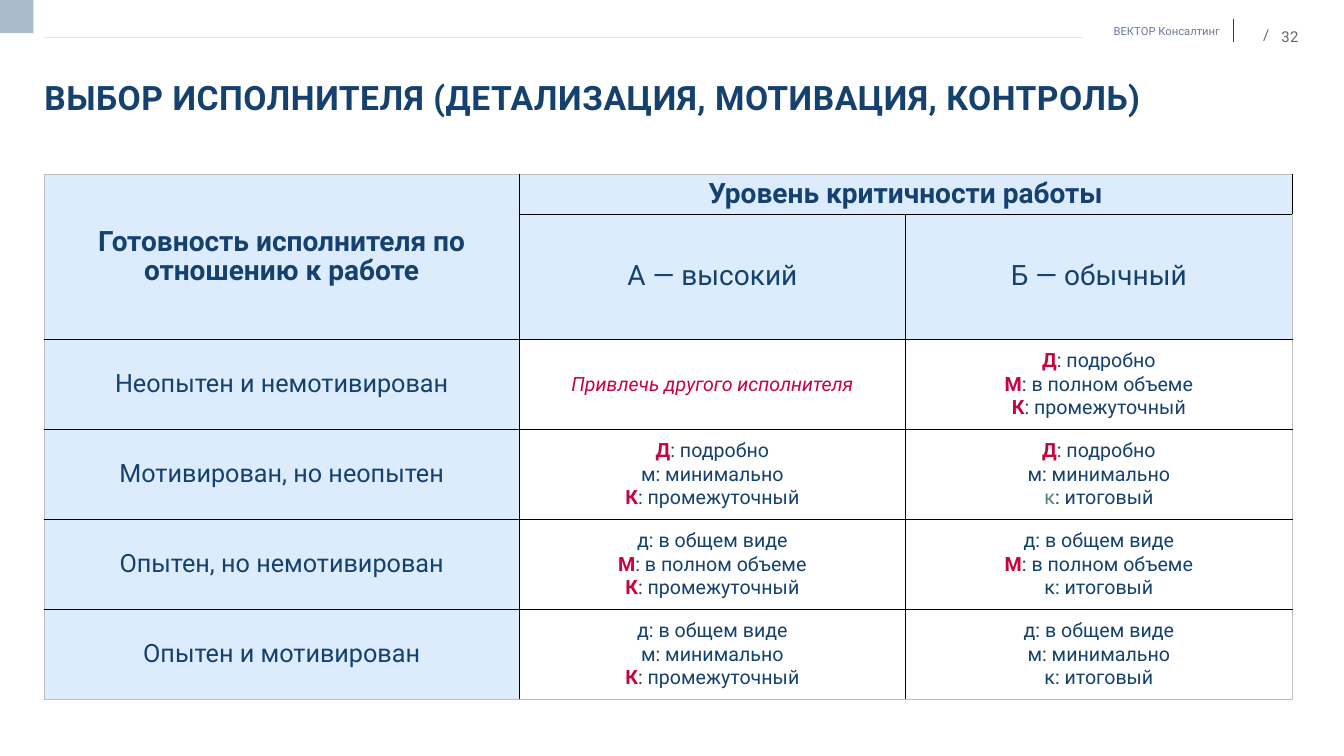
"""Slide with a table for choosing who performs a task."""
from dataclasses import dataclass, field

from lxml.etree import SubElement
from pptx import Presentation
from pptx.dml.color import RGBColor
from pptx.enum.shapes import MSO_CONNECTOR as Connector, MSO_SHAPE as Preset
from pptx.enum.text import MSO_ANCHOR as Anchor, MSO_AUTO_SIZE as AutoSize, PP_ALIGN as Align
from pptx.oxml.ns import qn
from pptx.util import Emu, Inches, Pt

WIDTH, HEIGHT = Inches(13.33), Inches(7.5)
NAVY, RED, GREEN, PALE = "15416F", "C60440", "56836F", "DCECFC"
BLACK, SILVER, GREY = "000000", "BFBFBF", "666666"
COLUMN_SHARES = (35.33, 28.76, 28.76)
ROW_SHARES = (5.3, 16.53) + (11.91,) * 4
MEANINGS = {
    "Д": "подробно", "д": "в общем виде",
    "М": "в полном объеме", "м": "минимально",
    "К": "промежуточный", "к": "итоговый",
}


@dataclass(frozen=True)
class Box:
    """Left, top, width and height as percentages of the slide."""
    left: float
    top: float
    width: float
    height: float

    def lengths(self) -> tuple[Emu, ...]:
        """Return the four lengths in slide units."""
        return across(self.left), down(self.top), across(self.width), down(self.height)


@dataclass(frozen=True)
class Span:
    """A piece of text in one format."""
    text: str
    size: float
    color: str = NAVY
    bold: bool = False
    italic: bool = False
    tracking: int = 0


@dataclass(frozen=True)
class Label:
    """A one-line text box."""
    box: Box
    span: Span
    align: Align = Align.RIGHT
    anchor: Anchor = Anchor.MIDDLE
    frame: dict = field(default_factory=lambda: dict.fromkeys(
        ("margin_left", "margin_top", "margin_right", "margin_bottom"), 0))


@dataclass(frozen=True)
class Rule:
    """A straight line between two points given as percentages."""
    start: tuple[float, float]
    end: tuple[float, float]
    color: str
    weight: float


@dataclass(frozen=True)
class Readiness:
    """A table row: performer state and the letter codes for levels A and B."""
    state: str
    high: str
    usual: str
    accent: str = ""


LABELS = (
    Label(Box(80.5, 3.2, 10.28, 1.73), Span("ВЕКТОР Консалтинг", 8, "697A98")),
    Label(Box(93.47, 4, 3.15, 1.73), Span("32", 10.7, GREY, tracking=40)),
    Label(Box(93.25, 2.67, 1.95, 3.73), Span("/", 10.7, GREY), Align.LEFT, Anchor.TOP, {}),
)
RULES = (
    Rule((91.75, 2.53), (91.75, 5.6), NAVY, 0.5),
    Rule((80.57, 4.93), (3.3, 4.93), "E7E6E6", 0.75),
)
ROWS = (
    Readiness("Неопытен и немотивирован", "", "ДМК"),
    Readiness("Мотивирован, но неопытен", "ДмК", "Дмк", accent="к"),
    Readiness("Опытен, но немотивирован", "дМК", "дМк"),
    Readiness("Опытен и мотивирован", "дмК", "дмк"),
)


def across(share: float) -> Emu:
    """Convert a percentage of the slide width."""
    return Emu(int(WIDTH * share / 100))


def down(share: float) -> Emu:
    """Convert a percentage of the slide height."""
    return Emu(int(HEIGHT * share / 100))


def paint(color: str) -> RGBColor:
    """Turn a hex string into a colour."""
    return RGBColor.from_string(color)


def apply(target, values: dict) -> None:
    """Set every attribute of the target from the values."""
    for name, value in values.items():
        setattr(target, name, value)


def write(para, spans: list[Span], align: Align, spacing: float = 1.0) -> None:
    """Fill a paragraph with formatted spans."""
    apply(para, {"alignment": align, "line_spacing": spacing})
    for span in spans:
        run = para.add_run()
        run.text = span.text
        apply(run.font, {"name": "Roboto", "size": Pt(span.size),
                         "bold": span.bold, "italic": span.italic})
        run.font.color.rgb = paint(span.color)
        if span.tracking:
            run.font._element.set("spc", str(span.tracking))


def add_label(page, label: Label) -> None:
    """Place a text box."""
    frame = page.shapes.add_textbox(*label.box.lengths()).text_frame
    apply(frame, {"word_wrap": True, "vertical_anchor": label.anchor, **label.frame})
    write(frame.paragraphs[0], [label.span], label.align)


def add_rule(page, rule: Rule) -> None:
    """Draw a line without a shadow."""
    (x1, y1), (x2, y2) = rule.start, rule.end
    line = page.shapes.add_connector(Connector.STRAIGHT, across(x1), down(y1), across(x2), down(y2))
    line.line.color.rgb = paint(rule.color)
    line.line.width = Pt(rule.weight)
    SubElement(line._element.spPr, qn("a:effectLst"))


def add_corner(page) -> None:
    """Draw the square in the top left corner."""
    corner = page.shapes.add_shape(Preset.RECTANGLE, *Box(0, 0, 2.48, 4.4).lengths())
    corner.shadow.inherit = False
    corner.fill.solid()
    corner.fill.fore_color.rgb = paint("AABACA")
    corner.line.fill.background()


def set_title(page, text: str) -> None:
    """Move and format the title placeholder."""
    title = page.shapes.title
    apply(title, dict(zip(("left", "top", "width", "height"), Box(3.3, 10.13, 87.55, 10.8).lengths())))
    apply(title.text_frame, {"margin_left": 0, "margin_top": 0, "margin_right": 0, "margin_bottom": 0,
                             "word_wrap": True, "auto_size": AutoSize.NONE, "vertical_anchor": Anchor.TOP})
    write(title.text_frame.paragraphs[0], [Span(text, 24, bold=True, tracking=40)], Align.LEFT)


def dress(cell, row: int, column: int) -> None:
    """Give a cell its borders, fill and margins."""
    properties = cell._tc.get_or_add_tcPr()
    outer = {"L": column == 0, "R": column == len(COLUMN_SHARES) - 1,
             "T": row == 0, "B": row == len(ROW_SHARES) - 1}
    for side, is_outer in outer.items():
        edge = SubElement(properties, qn(f"a:ln{side}"), w=str(Pt(0.75 if is_outer else 1)))
        fill = SubElement(edge, qn("a:solidFill"))
        SubElement(fill, qn("a:srgbClr"), val=SILVER if is_outer else BLACK)
    if row < 2 or column == 0:
        cell.fill.solid()
        cell.fill.fore_color.rgb = paint(PALE)
    else:
        cell.fill.background()
    apply(cell, {"vertical_anchor": Anchor.MIDDLE, "margin_left": Inches(0.1), "margin_right": Inches(0.1),
                 "margin_top": 0, "margin_bottom": 0})


def fill_cell(cell, lines: list[list[Span]], spacing: float = 1.0) -> None:
    """Write centred lines into a cell."""
    frame = cell.text_frame
    for index, spans in enumerate(lines):
        para = frame.add_paragraph() if index else frame.paragraphs[0]
        write(para, spans, Align.CENTER, spacing)


def advice(codes: str, accent: str = "") -> list[list[Span]]:
    """Spell out letter codes, with capitals bold and red."""
    if not codes:
        return [[Span("Привлечь другого исполнителя", 14, RED, italic=True)]]
    return [[Span(code, 14, RED if code.isupper() else GREEN if code == accent else NAVY, code.isupper()),
             Span(f": {MEANINGS[code]}", 14)] for code in codes]


def add_matrix(page) -> None:
    """Build the table of readiness against criticality."""
    box = Box(3.3, 23.07, sum(COLUMN_SHARES), sum(ROW_SHARES))
    table = page.shapes.add_table(len(ROW_SHARES), len(COLUMN_SHARES), *box.lengths()).table
    apply(table, {"first_row": False, "horz_banding": False})
    for column, share in zip(table.columns, COLUMN_SHARES):
        column.width = across(share)
    for index, share in enumerate(ROW_SHARES):
        table.rows[index].height = down(share)
        for column in range(len(COLUMN_SHARES)):
            dress(table.cell(index, column), index, column)
    table.cell(0, 0).merge(table.cell(1, 0))
    table.cell(0, 1).merge(table.cell(0, 2))
    headings = {(0, 0): "Готовность исполнителя по отношению к работе", (0, 1): "Уровень критичности работы",
                (1, 1): "А — высокий", (1, 2): "Б — обычный"}
    for (row, column), text in headings.items():
        fill_cell(table.cell(row, column), [[Span(text, 20, bold=row == 0)]], 0.9)
    for index, entry in enumerate(ROWS, start=2):
        contents = [[Span(entry.state, 18)]], advice(entry.high), advice(entry.usual, entry.accent)
        for column, lines in enumerate(contents):
            fill_cell(table.cell(index, column), lines)


def main() -> None:
    """Build and save the deck."""
    deck = Presentation()
    apply(deck, {"slide_width": WIDTH, "slide_height": HEIGHT})
    page = deck.slides.add_slide(deck.slide_layouts[5])
    add_corner(page)
    for rule in RULES:
        add_rule(page, rule)
    for label in LABELS:
        add_label(page, label)
    set_title(page, "ВЫБОР ИСПОЛНИТЕЛЯ (ДЕТАЛИЗАЦИЯ, МОТИВАЦИЯ, КОНТРОЛЬ)")
    add_matrix(page)
    deck.save("out.pptx")


if __name__ == "__main__":
    main()
